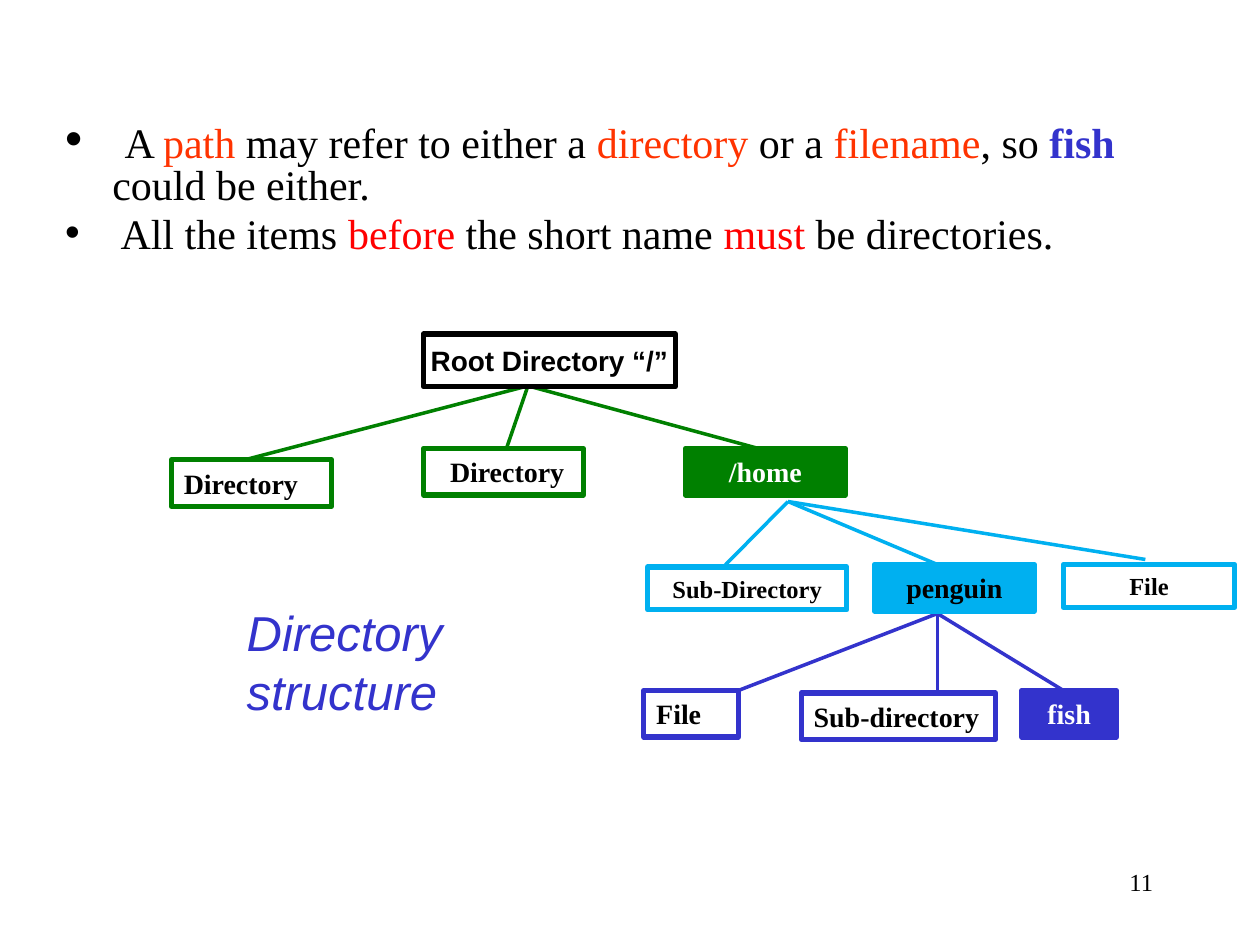
"""Build the slide on paths and the directory structure."""
from lxml.etree import SubElement
from pptx import Presentation
from pptx.dml.color import RGBColor
from pptx.enum.shapes import MSO_CONNECTOR, MSO_SHAPE
from pptx.enum.text import MSO_ANCHOR, MSO_AUTO_SIZE, PP_ALIGN
from pptx.oxml.ns import qn
from pptx.util import Pt

COLORS = {
    "black": "000000",
    "white": "FFFFFF",
    "green": "008000",
    "sky": "00B0F0",
    "indigo": "3333CC",
    "orange": "FF3300",
    "red": "FF0000",
}
SERIF = "Times New Roman"
SANS = "Arial"


def rgb(color):
    """Return the named colour."""
    return RGBColor.from_string(COLORS[color])


def style(font, size, color="black", name=SERIF, bold=False, italic=False):
    """Set every used property of a font."""
    font.size, font.name = Pt(size), name
    font.bold, font.italic = bold, italic
    font.color.rgb = rgb(color)


def add_statement(paragraph, parts):
    """Fill a bulleted paragraph with (text, colour, size) parts."""
    paragraph.line_spacing = 0.8
    paragraph.space_before = Pt(5)
    properties = paragraph._p.get_or_add_pPr()
    properties.set("marL", str(Pt(27)))
    properties.set("indent", str(Pt(-27)))
    SubElement(properties, qn("a:buChar")).set("char", "•")
    paragraph.font.name = SERIF
    for text, color, size in parts:
        run = paragraph.add_run()
        run.text = text
        run.font.size = Pt(size)
        run.font.color.rgb = rgb(color)
        run.font.bold = text == "fish"


def add_statements(body, statements):
    """Place the body placeholder and write its statements."""
    body.left, body.top, body.width, body.height = Pt(30), Pt(30), Pt(648), Pt(130.5)
    frame = body.text_frame
    frame.auto_size = MSO_AUTO_SIZE.NONE
    frame.vertical_anchor = MSO_ANCHOR.TOP
    frame.margin_top = Pt(39)
    for index, parts in enumerate(statements):
        paragraph = frame.add_paragraph() if index else frame.paragraphs[0]
        add_statement(paragraph, parts)


def add_node(slide, label, left, top, width, height, color, filled=False,
             ink="black", size=16, font=SERIF, align=PP_ALIGN.CENTER,
             inset=7.2, wrap=True):
    """Add one labelled box of the tree."""
    node = slide.shapes.add_shape(
        MSO_SHAPE.RECTANGLE, Pt(left), Pt(top), Pt(width), Pt(height))
    node.shadow.inherit = False
    if filled:
        node.fill.solid()
        node.fill.fore_color.rgb = rgb(color)
    else:
        node.fill.background()
    node.line.color.rgb = rgb(color)
    node.line.width = Pt(3)
    frame = node.text_frame
    frame.word_wrap = wrap
    frame.margin_left = Pt(inset)
    frame.vertical_anchor = MSO_ANCHOR.MIDDLE
    paragraph = frame.paragraphs[0]
    paragraph.text = label
    paragraph.alignment = align
    style(paragraph.font, size, ink, font, bold=True)


def add_branches(slide, parent, children, color):
    """Draw lines from a parent point to each child point."""
    for child in children:
        branch = slide.shapes.add_connector(
            MSO_CONNECTOR.STRAIGHT, *map(Pt, parent + child))
        branch.line.color.rgb = rgb(color)
        branch.line.width = Pt(2)
        SubElement(branch._element.spPr, qn("a:effectLst"))


def add_label(slide, text, left, top, width, height, align=PP_ALIGN.LEFT, **look):
    """Add a free-standing line of text."""
    label = slide.shapes.add_textbox(Pt(left), Pt(top), Pt(width), Pt(height))
    label.text_frame.word_wrap = True
    paragraph = label.text_frame.paragraphs[0]
    paragraph.text = text
    paragraph.alignment = align
    style(paragraph.font, **look)


def add_tree(slide):
    """Draw the levels of the directory tree and their branches."""
    left = PP_ALIGN.LEFT
    add_branches(slide, (301.7, 220.5),
                 [(139.7, 262.8), (289.4, 256.3), (433.4, 256.3)], "green")
    add_branches(slide, (450.3, 286.6),
                 [(414, 323.3), (535.7, 322.6), (654.5, 319.7)], "sky")
    add_branches(slide, (535.7, 350.6),
                 [(421.9, 394.6), (535.7, 394.6), (607.7, 394.6)], "indigo")

    add_node(slide, "Root Directory “/”", 242, 190.8, 144, 30.2, "black",
             font=SANS, wrap=False)

    add_node(slide, "Directory", 98, 262.8, 91.4, 26.6, "green", align=left)
    add_node(slide, "Directory", 242, 256.3, 91.4, 26.6, "green", align=left,
             inset=15.2)
    add_node(slide, "/home", 391.7, 256.3, 91.4, 26.6, "green", filled=True,
             ink="white")

    add_node(slide, "Sub-Directory", 370.1, 324, 113.8, 24.5, "sky", size=14)
    add_node(slide, "penguin", 499.7, 322.6, 91.4, 26.6, "sky", filled=True)
    add_node(slide, "File", 607.7, 322.6, 97.9, 24.5, "sky", size=14)

    add_node(slide, "File", 367.9, 394.6, 54, 26.6, "indigo", align=left)
    add_node(slide, "Sub-directory", 457.9, 396, 110.9, 26.6, "indigo", align=left)
    add_node(slide, "fish", 583.9, 394.6, 54, 26.6, "indigo", filled=True,
             ink="white")


def main():
    """Build and save the presentation."""
    deck = Presentation()
    deck.slide_width, deck.slide_height = Pt(720), Pt(540)
    slide = deck.slides.add_slide(deck.slide_layouts[1])
    title, body = slide.placeholders
    title._element.getparent().remove(title._element)

    add_statements(body, [
        [(" ", "black", 28), ("A ", "black", 24), ("path", "orange", 24),
         (" may refer to either a ", "black", 24), ("directory", "orange", 24),
         (" or a ", "black", 24), ("filename", "orange", 24),
         (", so ", "black", 24), ("fish", "indigo", 24),
         (" could be either.", "black", 24)],
        [(" All the items ", "black", 24), ("before", "red", 24),
         (" the short name ", "black", 24), ("must", "red", 24),
         (" be directories.", "black", 24)],
    ])
    add_tree(slide)
    add_label(slide, "Directory structure", 133.9, 340.6, 131.8, 74.2,
              size=28, color="indigo", name=SANS, italic=True)
    add_label(slide, "11", 516.2, 491.8, 149.8, 36, align=PP_ALIGN.RIGHT, size=14)
    deck.save("out.pptx")


if __name__ == "__main__":
    main()
